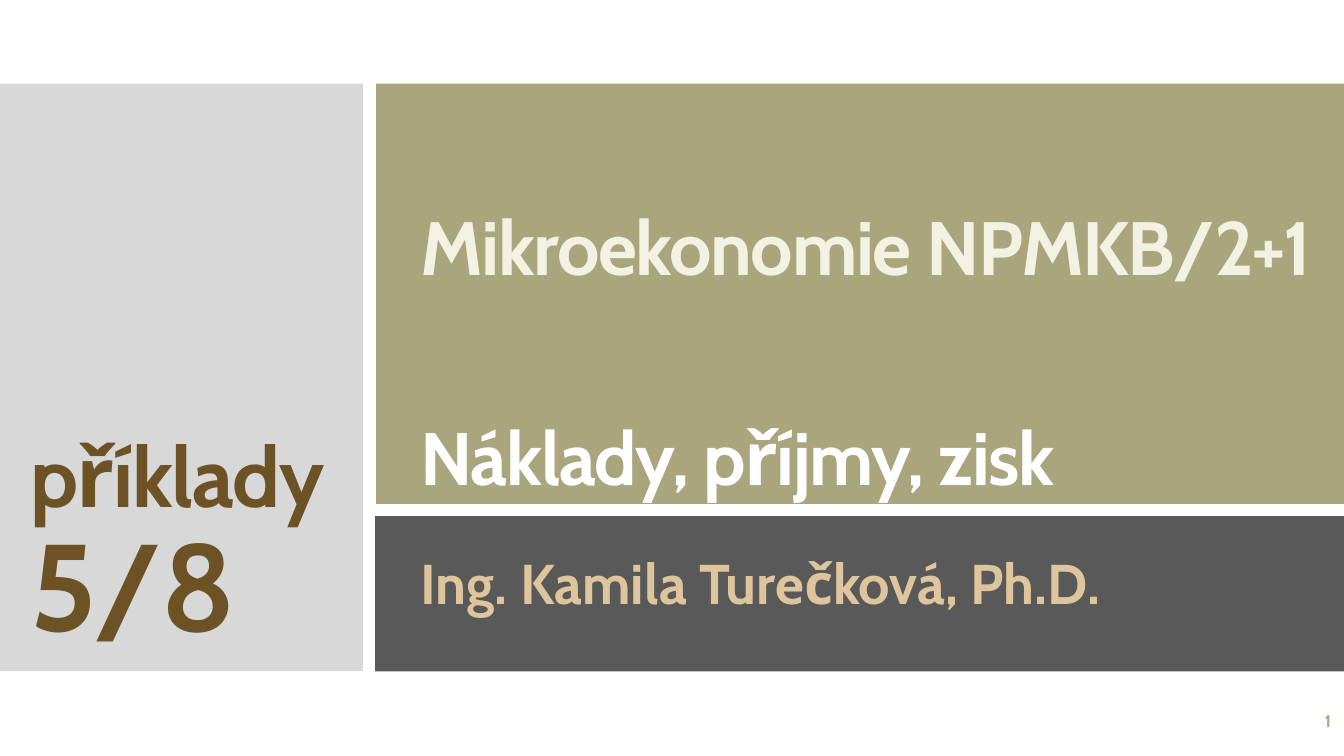
from pptx import Presentation
from pptx.dml.color import RGBColor
from pptx.enum import shapes, text
from pptx.oxml import parse_xml
from pptx.oxml.ns import nsdecls
from pptx.util import Inches, Pt

FONT = "Cabin"
COLORS = {
    "sidebar": "D8D8D8",
    "olive": "A9A57C",
    "charcoal": "595959",
    "cream": "F2F1E2",
    "white": "FFFFFF",
    "sand": "DEC59E",
    "brown": "6D5225",
}


def color(name):
    return RGBColor.from_string(COLORS[name])


def add_panel(s, box, fill):
    """Add a plain filled rectangle."""
    sp = s.shapes.add_shape(shapes.MSO_SHAPE.RECTANGLE, *map(Inches, box))
    sp.fill.solid()
    sp.fill.fore_color.rgb = color(fill)
    sp.line.fill.background()
    sp.shadow.inherit = False


def set_frame(sp, box, anchor, bottom=0.05):
    """Place a text shape and return its prepared frame."""
    sp.left, sp.top, sp.width, sp.height = map(Inches, box)
    tf = sp.text_frame
    tf.word_wrap = True
    tf.auto_size = text.MSO_AUTO_SIZE.NONE
    tf.vertical_anchor = anchor
    tf.margin_bottom = Inches(bottom)
    tf.margin_right = 0
    return tf


def style_font(font, size, name):
    font.name = FONT
    font.size = Pt(size)
    font.bold = True
    font.color.rgb = color(name)


def write_lines(tf, lines, tracking=0):
    """Write one paragraph per (words, size, colour, space before)."""
    for i, (words, size, name, before) in enumerate(lines):
        p = tf.paragraphs[0] if i == 0 else tf.add_paragraph()
        p.alignment = text.PP_ALIGN.LEFT
        p.line_spacing = 0.9
        p.space_before = Pt(before)
        r = p.add_run()
        r.text = words
        style_font(r.font, size, name)
        if tracking:
            r.font._element.set("spc", str(tracking))


def add_slide_number(s, box):
    sp = s.shapes.add_textbox(*map(Inches, box))
    tf = set_frame(sp, box, text.MSO_ANCHOR.MIDDLE)
    tf.margin_right = Inches(0.1)
    p = tf.paragraphs[0]
    p.alignment = text.PP_ALIGN.RIGHT
    style_font(p.font, 12, "olive")
    # The field takes the paragraph's font settings
    field = parse_xml(
        f'<a:fld {nsdecls("a")} type="slidenum" '
        'id="{B6F15528-21DE-4FAA-801E-634DDDAF4B2B}">'
        f'<a:rPr lang="cs-CZ" sz="1200" b="1"><a:solidFill><a:srgbClr val="{COLORS["olive"]}"/>'
        f'</a:solidFill><a:latin typeface="{FONT}"/></a:rPr><a:t>1</a:t></a:fld>')
    p._p.append(field)


def main():
    prs = Presentation()
    prs.slide_width, prs.slide_height = Inches(13.33), Inches(7.5)
    s = prs.slides.add_slide(prs.slide_layouts[0])
    title, subtitle = s.placeholders

    # Background panels
    add_panel(s, (0, 0.83, 3.6, 5.83), "sidebar")
    add_panel(s, (3.73, 0.83, 9.6, 4.17), "olive")
    add_panel(s, (3.72, 5.12, 9.61, 1.54), "charcoal")

    # Placeholders go in front of the panels
    for sp in (title, subtitle):
        s.shapes._spTree.append(sp._element)

    # Course and topic
    tf = set_frame(title, (4.07, 1.42, 9.06, 3.58), text.MSO_ANCHOR.BOTTOM, 0.02)
    write_lines(tf, [("Mikroekonomie NPMKB/2+1", 54, "cream", 0),
                     ("Náklady, příjmy, zisk", 53, "white", 93)], -100)

    # Lecturer
    tf = set_frame(subtitle, (4.07, 5.47, 7.86, 0.84), text.MSO_ANCHOR.TOP)
    write_lines(tf, [("Ing. Kamila Turečková, Ph.D.", 40, "sand", 0)])

    # Sidebar label
    box = (0.2, 0.95, 3.2, 5.58)
    sp = s.shapes.add_textbox(*map(Inches, box))
    tf = set_frame(sp, box, text.MSO_ANCHOR.BOTTOM, 0)
    write_lines(tf, [("příklady", 60, "brown", 0), ("5/8", 88, "brown", 0)], -100)

    add_slide_number(s, (11.63, 6.95, 1.67, 0.4))
    prs.save("out.pptx")


if __name__ == "__main__":
    main()
